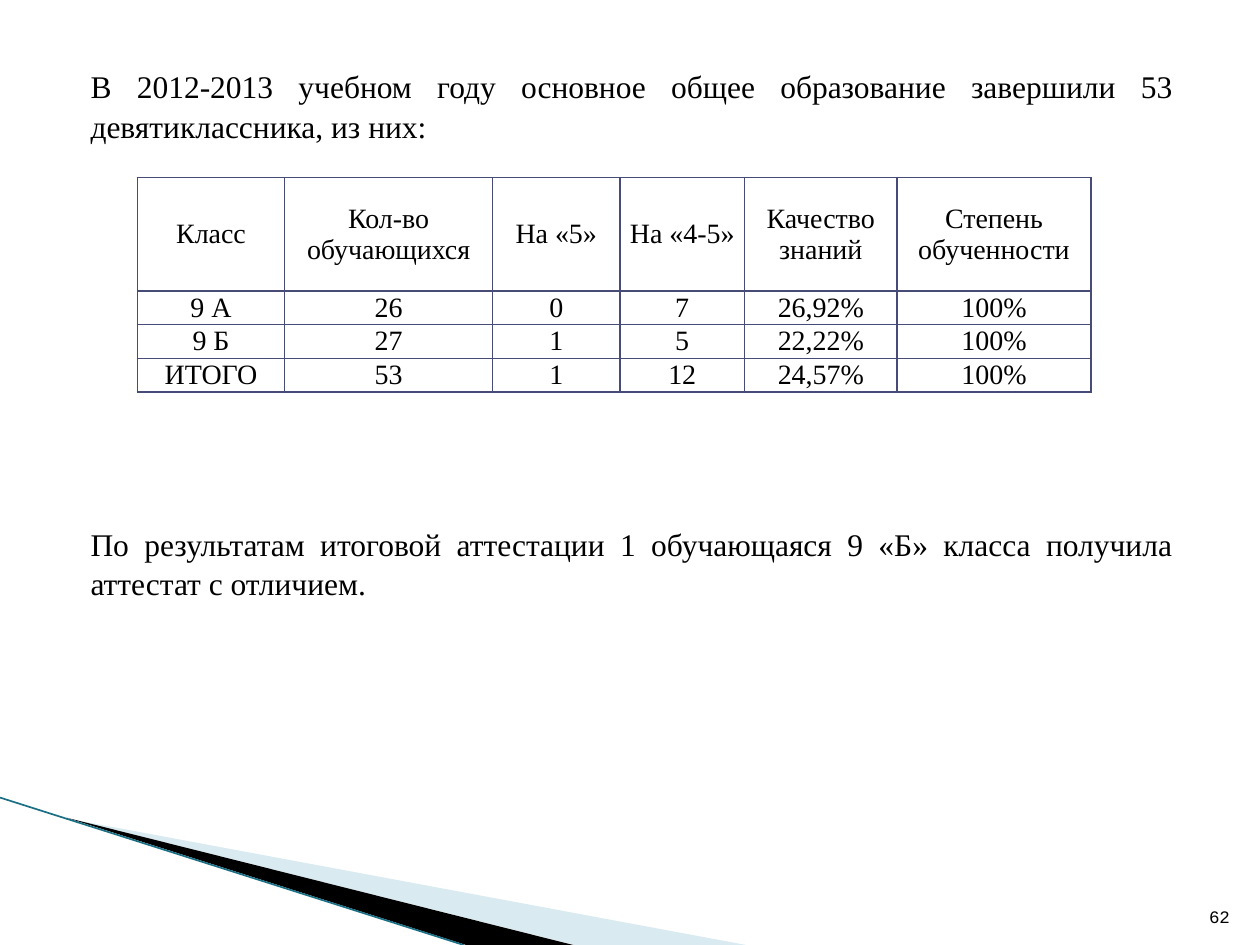
from dataclasses import dataclass

from lxml import etree
from pptx import Presentation
from pptx.dml.color import RGBColor
from pptx.enum.shapes import MSO_CONNECTOR
from pptx.enum.text import MSO_ANCHOR, PP_ALIGN
from pptx.oxml.ns import qn
from pptx.util import Inches, Pt

LINE = MSO_CONNECTOR.STRAIGHT
TOP, MIDDLE, BOTTOM = MSO_ANCHOR.TOP, MSO_ANCHOR.MIDDLE, MSO_ANCHOR.BOTTOM
CENTER, RIGHT, JUSTIFY = PP_ALIGN.CENTER, PP_ALIGN.RIGHT, PP_ALIGN.JUSTIFY


@dataclass(frozen=True)
class Theme:
    """Colours, fonts and type sizes of the slide."""
    ink: str = "000000"
    pale: str = "A0CBDC"
    edge: str = "1A6F84"
    grid: str = "474B78"
    serif: str = "Times New Roman"
    mono: str = "Courier New"
    body: int = 18
    cell: int = 16
    page: int = 10


THEME = Theme()
NOTES = [
    "В 2012-2013 учебном году основное общее образование завершили 53 девятиклассника, из них:",
    "По результатам итоговой аттестации 1 обучающаяся 9 «Б» класса получила аттестат с отличием.",
]
ROWS = [
    ["Класс", "Кол-во обучающихся", "На «5»", "На «4-5»", "Качество знаний", "Степень обученности"],
    ["9 А", "26", "0", "7", "26,92%", "100%"],
    ["9 Б", "27", "1", "5", "22,22%", "100%"],
    ["ИТОГО", "53", "1", "12", "24,57%", "100%"],
]
WIDTHS = [1.17, 1.65, 1.01, 0.99, 1.21, 1.54]
HEIGHTS = [0.9, 0.25, 0.25, 0.25]


def color(code):
    """Turn a hex code into a colour."""
    return RGBColor.from_string(code)


def write(para, text, size, font, align):
    """Add one styled run to a paragraph."""
    para.alignment = align
    run = para.add_run()
    run.text = text
    run.font.size = Pt(size)
    run.font.name = font
    run.font.color.rgb = color(THEME.ink)


def add_box(slide, box, anchor):
    """Add a wrapping text box and return its frame."""
    frame = slide.shapes.add_textbox(*map(Inches, box)).text_frame
    frame.word_wrap = True
    frame.vertical_anchor = anchor
    return frame


def add_notes(slide, box, texts, gap):
    """Place justified paragraphs with a gap between them."""
    frame = add_box(slide, box, TOP)
    for i, text in enumerate(texts):
        para = frame.add_paragraph() if i else frame.paragraphs[0]
        para.line_spacing = 1.05
        para.space_before = Pt(gap if i else 0)
        write(para, text, THEME.body, THEME.serif, JUSTIFY)


def add_page(slide, box, text):
    """Place the page number."""
    frame = add_box(slide, box, BOTTOM)
    write(frame.paragraphs[0], text, THEME.page, THEME.mono, RIGHT)


def add_frame(cell):
    """Draw a thin line on all four sides of a cell."""
    props = cell._tc.get_or_add_tcPr()
    for side in ("lnL", "lnR", "lnT", "lnB"):
        line = etree.SubElement(props, qn(f"a:{side}"), w=str(Pt(1)))
        fill = etree.SubElement(line, qn("a:solidFill"))
        etree.SubElement(fill, qn("a:srgbClr"), val=THEME.grid)


def add_grades(slide, box):
    """Place the table of class results."""
    table = slide.shapes.add_table(len(ROWS), len(WIDTHS), *map(Inches, box)).table
    table.first_row = table.horz_banding = False
    for col, width in zip(table.columns, WIDTHS):
        col.width = Inches(width)
    for row, height, texts in zip(table.rows, HEIGHTS, ROWS):
        row.height = Inches(height)
        for cell, text in zip(row.cells, texts):
            cell.margin_left = cell.margin_right = Inches(0.05)
            cell.margin_top = cell.margin_bottom = 0
            cell.vertical_anchor = MIDDLE
            add_frame(cell)
            cell.fill.background()
            write(cell.text_frame.paragraphs[0], text, THEME.cell, THEME.serif, CENTER)


def add_wedge(slide, left, top, points, code, alpha=100):
    """Fill an outline whose points are offsets from a corner."""
    spots = [(Inches(left + x), Inches(top + y)) for x, y in points]
    pen = slide.shapes.build_freeform(*spots[0])
    pen.add_line_segments(spots[1:])
    shape = pen.convert_to_shape()
    shape.shadow.inherit = False
    shape.line.fill.background()
    shape.fill.solid()
    shape.fill.fore_color.rgb = color(code)
    if alpha < 100:
        tint = shape.fill._xPr.find(qn("a:solidFill"))[0]
        etree.SubElement(tint, qn("a:alpha"), val=str(alpha * 1000))


def add_corner(slide, box):
    """Place the slanted wedges and line in the lower left corner."""
    left, top, width, height = box
    add_wedge(slide, left, top, [(0.55, 0.17), (width, height), (4.56, height)], THEME.pale, 40)
    add_wedge(slide, left, top, [(0.53, 0.16), (4.55, height), (3.7, height)], THEME.ink)
    ends = (left, top, left + 3.68, top + height)
    line = slide.shapes.add_connector(LINE, *map(Inches, ends))
    line.line.color.rgb = color(THEME.edge)
    line.line.width = Pt(0.95)
    etree.SubElement(line._element.spPr, qn("a:effectLst"))


def main():
    """Build the slide and save it."""
    deck = Presentation()
    deck.slide_width, deck.slide_height = Inches(10), Inches(7.5)
    slide = deck.slides.add_slide(deck.slide_layouts[6])
    add_corner(slide, (0, 6.33, 5.92, 1.17))
    add_notes(slide, (0.62, 0.47, 8.79, 4.67), NOTES, 216)
    add_grades(slide, (1.09, 1.41, sum(WIDTHS), sum(HEIGHTS)))
    add_page(slide, (9.46, 7.01, 0.4, 0.4), "62")
    deck.save("out.pptx")


if __name__ == "__main__":
    main()
